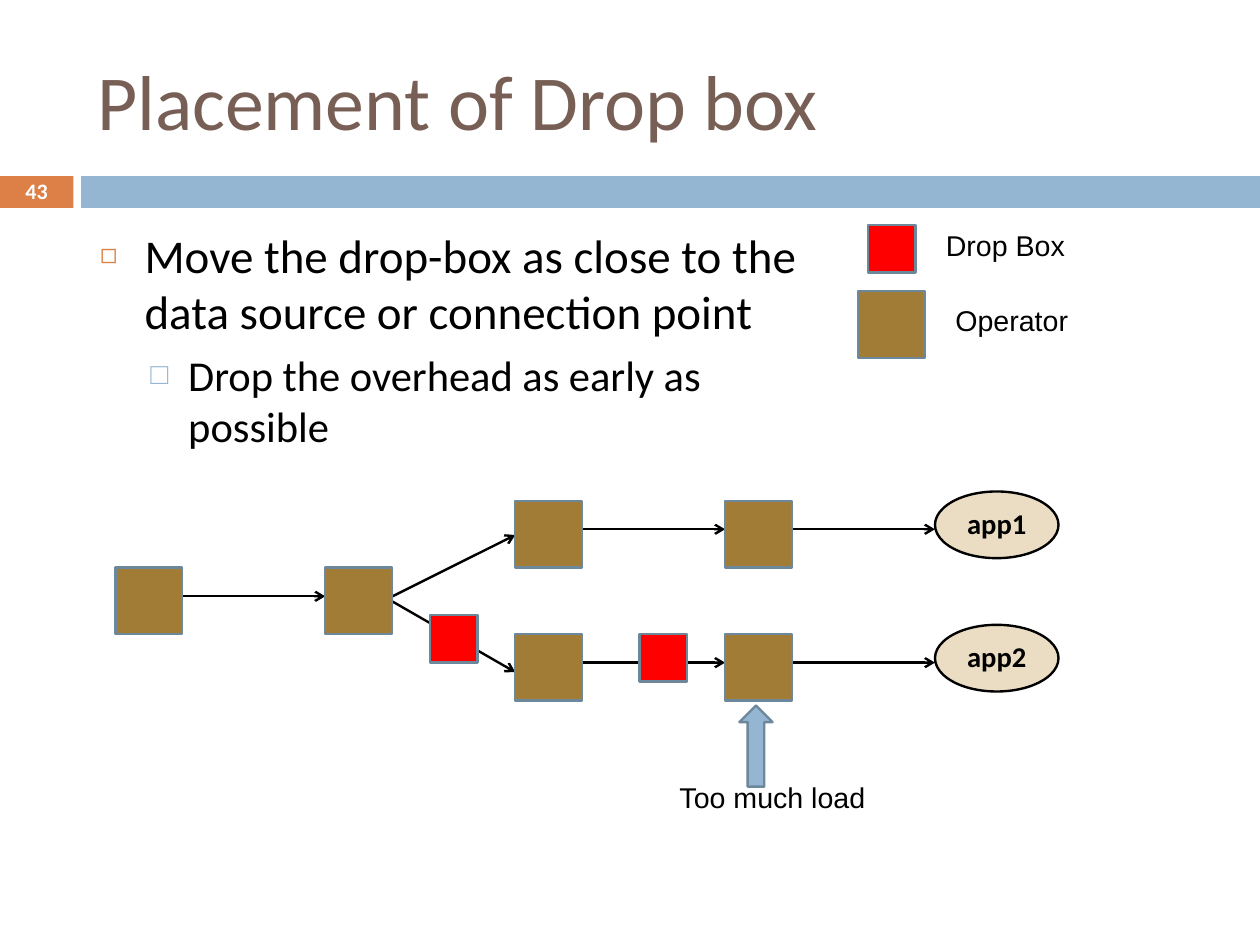
"""Build the slide on where to place a drop box in an operator network."""
from lxml import etree
from pptx import Presentation
from pptx.dml.color import RGBColor
from pptx.enum.shapes import MSO_CONNECTOR, MSO_SHAPE
from pptx.enum.text import MSO_ANCHOR, PP_ALIGN
from pptx.oxml.ns import qn
from pptx.util import Pt

RECTANGLE, OVAL, UP_ARROW = MSO_SHAPE.RECTANGLE, MSO_SHAPE.OVAL, MSO_SHAPE.UP_ARROW
STRAIGHT = MSO_CONNECTOR.STRAIGHT
TOP, MIDDLE = MSO_ANCHOR.TOP, MSO_ANCHOR.MIDDLE
LEFT, CENTER = PP_ALIGN.LEFT, PP_ALIGN.CENTER

COLORS = {
    "title": "775F55", "orange": "DD8047", "blue": "94B6D2", "edge": "6D879B",
    "operator": "A17C36", "drop": "FF0000", "app": "EBDDC3",
    "black": "000000", "white": "FFFFFF",
}
OPERATOR, DROP, PITCH = 42, 30, 132.2

deck = Presentation()
deck.slide_width, deck.slide_height = Pt(793.75), Pt(595.25)
page = deck.slides.add_slide(deck.slide_layouts[6])


def add_shape(kind, left, top, width, height, fill, edge=None):
    """Add a filled shape, outlined only when an edge colour is given."""
    shape = page.shapes.add_shape(kind, Pt(left), Pt(top), Pt(width), Pt(height))
    shape.shadow.inherit = False
    shape.fill.solid()
    shape.fill.fore_color.rgb = RGBColor.from_string(COLORS[fill])
    if edge:
        shape.line.color.rgb = RGBColor.from_string(COLORS[edge])
        shape.line.width = Pt(1.5)
    else:
        shape.line.fill.background()
    return shape


def write(box, text, size, color="black", font="Calibri", bold=False,
          align=LEFT, anchor=TOP, spacing=None):
    """Put one paragraph of text into a shape or text box."""
    frame = box.text_frame
    frame.word_wrap = True
    frame.vertical_anchor = anchor
    para = frame.paragraphs[0]
    para.text = text
    para.alignment = align
    para.line_spacing = spacing
    para.font.name, para.font.size, para.font.bold = font, Pt(size), bold
    para.font.color.rgb = RGBColor.from_string(COLORS[color])


add_shape(RECTANGLE, 0, 111, 46.2, 20, "orange")
add_shape(RECTANGLE, 51.2, 111, 742.5, 20, "blue")
title = page.shapes.add_textbox(Pt(53.3), Pt(20), Pt(707.8), Pt(85.7))
write(title, "Placement of Drop box", 49, "title", anchor=MIDDLE)
title.text_frame.margin_left = Pt(7.9)
number = page.shapes.add_textbox(Pt(0), Pt(109.8), Pt(46.2), Pt(21))
write(number, "43", 13.9, "white", bold=True, align=CENTER, anchor=MIDDLE)

body = page.shapes.add_textbox(Pt(55.2), Pt(138.6), Pt(468), Pt(165)).text_frame
body.word_wrap = True
body.margin_left = body.margin_right = Pt(7.9)
body.margin_top = body.margin_bottom = Pt(4)
points = [
    ("Move the drop-box as close to the data source or connection point",
     29.6, 7.7, 28, 28, "◻", "orange", 60),
    ("Drop the overhead as early as possible",
     26.8, 6.1, 55.5, 23.8, "□", "blue", 70),
]
for level, (text, size, before, indent, hang, mark, color, percent) in enumerate(points):
    para = body.add_paragraph() if level else body.paragraphs[0]
    para.text = text
    para.level = level
    para.space_before = Pt(before)
    properties = para._p.get_or_add_pPr()
    properties.set("marL", str(Pt(indent)))
    properties.set("indent", str(-Pt(hang)))
    bullet_color = etree.SubElement(properties, qn("a:buClr"))
    etree.SubElement(bullet_color, qn("a:srgbClr"), val=COLORS[color])
    etree.SubElement(properties, qn("a:buSzPct"), val=str(percent * 1000))
    etree.SubElement(properties, qn("a:buFont"), typeface="Arial")
    etree.SubElement(properties, qn("a:buChar"), char=mark)
    para.font.name, para.font.size = "Calibri", Pt(size)
    para.font.color.rgb = RGBColor.from_string(COLORS["black"])

columns = [72.7 + PITCH * step for step in range(2)]
columns += [324.6 + PITCH * step for step in range(3)]
upper, middle, lower = 315.4, 357.6, 399.4
operators = [(columns[0], middle), (columns[1], middle)]
operators += [(left, top) for top in (upper, lower) for left in columns[2:4]]

arrows = [
    (left + OPERATOR, top + 18, left + PITCH, top + 18)
    for left, top in operators if left != columns[1]
]
fork = columns[1] + OPERATOR
arrows += [
    (fork, 375.8, columns[2], 337),
    (fork, 378.7, columns[2], 423.4),
]
for ends in arrows:
    arrow = page.shapes.add_connector(STRAIGHT, *map(Pt, ends))
    arrow.line.color.rgb = RGBColor.from_string(COLORS["black"])
    arrow.line.width = Pt(1.5)
    etree.SubElement(arrow.line._get_or_add_ln(), qn("a:tailEnd"), type="arrow")
    etree.SubElement(arrow._element.spPr, qn("a:effectLst"))

legend_operator, legend_drop = (540.4, 183.4), (546.9, 141.6)
for left, top in operators + [legend_operator]:
    add_shape(RECTANGLE, left, top, OPERATOR, OPERATOR, "operator", "edge")
for left, top in [(270.9, 387.4), (402.8, 399.4), legend_drop]:
    add_shape(RECTANGLE, left, top, DROP, DROP, "drop", "edge")
for name, top in [("app1", upper), ("app2", lower)]:
    app = add_shape(OVAL, columns[4], top - 5.8, 77.8, 42, "app", "black")
    write(app, name, 18, bold=True, align=CENTER, anchor=MIDDLE, spacing=0.93)

labels = [
    ("Too much load", 421, 489.6),
    ("Drop Box", 588.8, 141.8),
    ("Operator", 594.8, 189.5),
]
for text, left, top in labels:
    label = page.shapes.add_textbox(Pt(left), Pt(top), Pt(156.2), Pt(27.4))
    write(label, text, 18, font="Arial", spacing=0.93)
add_shape(UP_ARROW, 465.8, 444.4, 20.9, 51.1, "blue", "edge")

deck.save("out.pptx")
